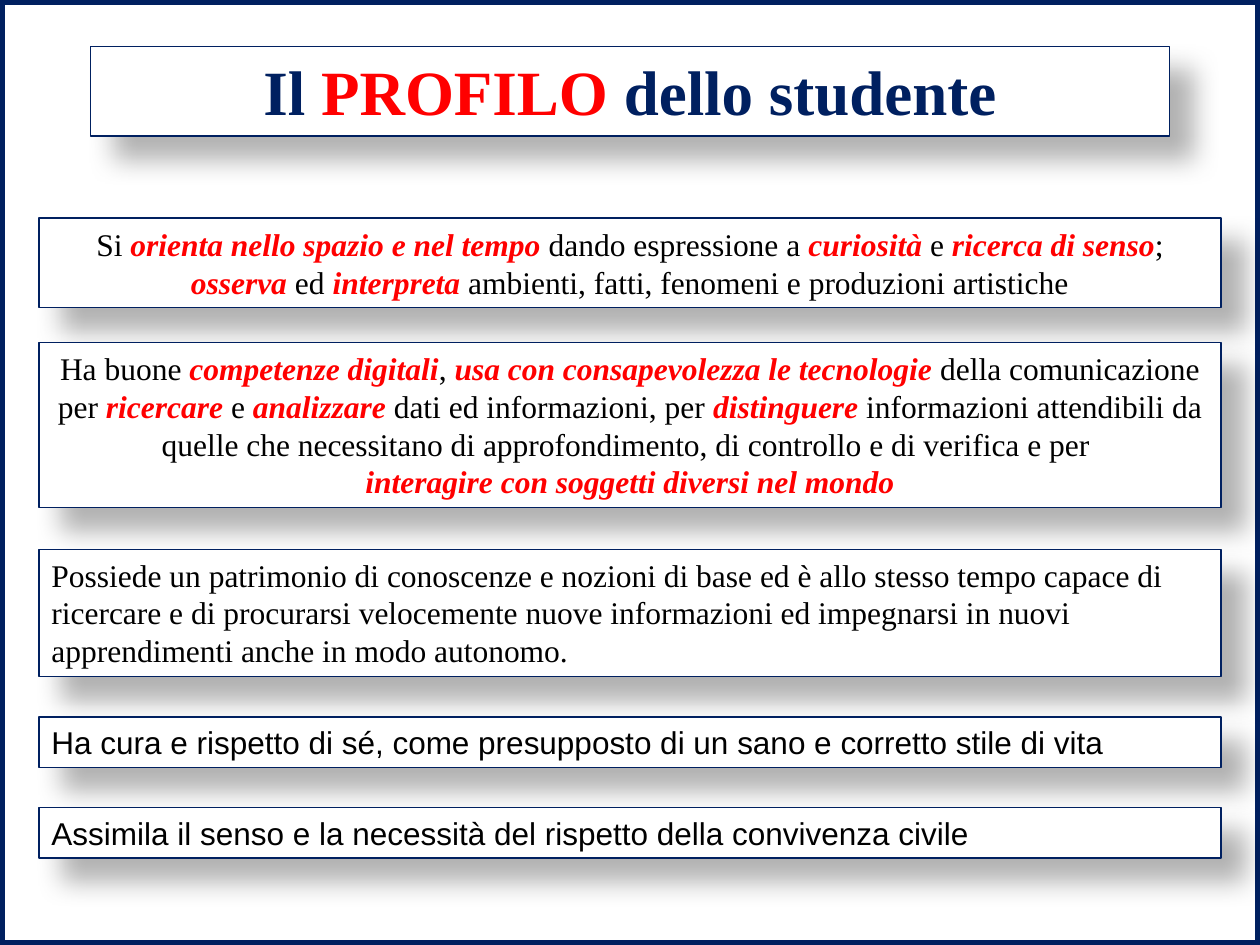
from lxml.etree import SubElement
from pptx import Presentation
from pptx.dml.color import RGBColor
from pptx.enum.shapes import MSO_SHAPE
from pptx.enum.text import MSO_ANCHOR, MSO_AUTO_SIZE, PP_ALIGN
from pptx.oxml.ns import qn
from pptx.util import Inches, Pt

COLS, ROWS = 100, 75
NAVY, RED, BLACK, WHITE = "002060", "FF0000", "000000", "FFFFFF"
SERIF, SANS = "Times New Roman", "Arial"
LEFT, WIDTH = 3.1, 93.8

# Text between asterisks is emphasised; a line break starts a paragraph.
TITLE = "Il *PROFILO *dello studente"
CARDS = [
    (17.3, 7.1, SERIF, PP_ALIGN.CENTER, MSO_ANCHOR.MIDDLE,
     "Si *orienta nello spazio e nel tempo *dando espressione a *curiosità* e "
     "*ricerca di senso*; *osserva* ed *interpreta* ambienti, fatti, fenomeni "
     "e produzioni artistiche"),
    (27.2, 13.1, SERIF, PP_ALIGN.CENTER, MSO_ANCHOR.TOP,
     "Ha buone *competenze digitali*, *usa con consapevolezza le tecnologie *"
     "della comunicazione per *ricercare* e *analizzare* dati ed informazioni, "
     "per *distinguere* informazioni attendibili da quelle che necessitano di "
     "approfondimento, di controllo e di verifica e per \n"
     "*interagire con soggetti diversi nel mondo*"),
    (43.6, 10.1, SERIF, PP_ALIGN.LEFT, MSO_ANCHOR.TOP,
     "Possiede un patrimonio di conoscenze e nozioni di base ed è allo stesso "
     "tempo capace di ricercare e di procurarsi velocemente nuove informazioni "
     "ed impegnarsi in nuovi apprendimenti anche in modo autonomo."),
    (56.9, 4, SANS, PP_ALIGN.LEFT, MSO_ANCHOR.TOP,
     "Ha cura e rispetto di sé, come presupposto di un sano e corretto stile "
     "di vita"),
    (64.1, 4, SANS, PP_ALIGN.LEFT, MSO_ANCHOR.TOP,
     "Assimila il senso e la necessità del rispetto della convivenza civile"),
]


def tint(code):
    return RGBColor.from_string(code)


class Deck:
    def __init__(self):
        self.show = Presentation()
        self.show.slide_width, self.show.slide_height = Inches(10), Inches(7.5)
        self.slide = self.show.slides.add_slide(self.show.slide_layouts[6])

    def rect(self, col, row, wide, high, line):
        """Add an unfilled navy outline, placed in grid columns and rows."""
        dx, dy = self.show.slide_width / COLS, self.show.slide_height / ROWS
        box = self.slide.shapes.add_shape(
            MSO_SHAPE.RECTANGLE, round(col * dx), round(row * dy),
            round(wide * dx), round(high * dy))
        box.shadow.inherit = False
        box.fill.background()
        box.line.color.rgb = tint(NAVY)
        box.line.width = Pt(line)
        return box

    def shade(self, box):
        """Give the box a soft shadow towards the lower right."""
        effects = box._element.spPr.find(qn("a:effectLst"))
        outer = SubElement(effects, qn("a:outerShdw"), blurRad=str(Pt(15)),
                           dist=str(Pt(18)), dir=str(45 * 60000),
                           algn="tl", rotWithShape="0")
        color = SubElement(outer, qn("a:srgbClr"), val=BLACK)
        SubElement(color, qn("a:alpha"), val="30000")

    def add_runs(self, para, text, font, size, color, title):
        for n, part in enumerate(text.split("*")):
            if not part:
                continue
            strong = n % 2 == 1
            run = para.add_run()
            run.text = part
            run.font.name, run.font.size = font, Pt(size)
            run.font.bold = title or strong
            run.font.italic = strong and not title
            run.font.color.rgb = tint(RED if strong else color)

    def card(self, col, row, wide, high, text, font=SERIF, size=18,
             color=BLACK, align=PP_ALIGN.CENTER, anchor=MSO_ANCHOR.TOP,
             title=False):
        box = self.rect(col, row, wide, high, 0.75)
        box.fill.solid()
        box.fill.fore_color.rgb = tint(WHITE)
        self.shade(box)
        frame = box.text_frame
        frame.word_wrap = True
        frame.auto_size = MSO_AUTO_SIZE.SHAPE_TO_FIT_TEXT
        frame.vertical_anchor = anchor
        for n, line in enumerate(text.split("\n")):
            para = frame.add_paragraph() if n else frame.paragraphs[0]
            para.alignment = align
            self.add_runs(para, line, font, size, color, title)


def main():
    deck = Deck()
    deck.rect(0, 0, COLS, ROWS, 6)
    deck.card(7.2, 3.7, 85.6, 7.1, TITLE, size=36, color=NAVY, title=True)
    for row, high, font, align, anchor, text in CARDS:
        deck.card(LEFT, row, WIDTH, high, text, font=font, align=align,
                  anchor=anchor)
    deck.show.save("out.pptx")


if __name__ == "__main__":
    main()
